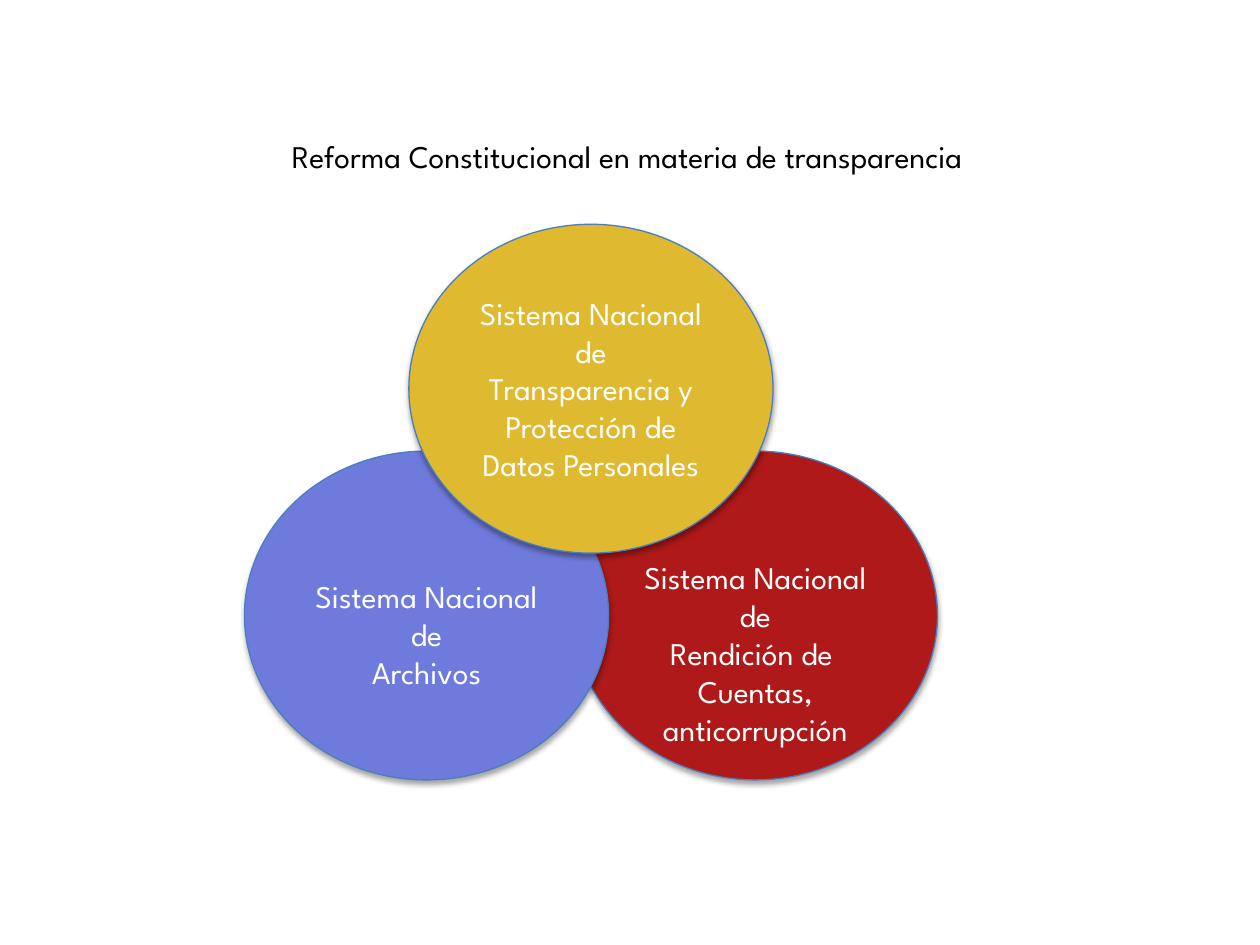
from lxml.etree import SubElement
from pptx import Presentation
from pptx.dml.color import RGBColor as Color
from pptx.enum.shapes import MSO_SHAPE as Shape
from pptx.enum.text import MSO_ANCHOR as Anchor, PP_ALIGN as Align
from pptx.oxml.ns import qn
from pptx.util import Inches, Pt

colors = {
    "title": "000000",
    "label": "FFFFFF",
    "outline": "4B7EBC",
    "shadow": "000000",
    "accountability": "AF1919",
    "archives": "6E7BDC",
    "transparency": "DFBA31",
}
text_format = {"name": "League Spartan", "size": Pt(18)}
origin_left, origin_top = 1.94, 1.78
column, row = 1.305, 1.8
circle_width, circle_height = 2.89, 2.61

circles = [
    ("accountability", 2, 1, 0.47,
     ["Sistema Nacional de", "Rendición de ", "Cuentas, anticorrupción"]),
    ("archives", 0, 1, 0.62, ["Sistema Nacional", "de", "Archivos"]),
    ("transparency", 1, 0, 0.17,
     ["Sistema Nacional", "de", "Transparencia y Protección de Datos Personales"]),
]


def write_lines(frame, lines, color):
    frame.word_wrap = True
    for index, line in enumerate(lines):
        para = frame.add_paragraph() if index else frame.paragraphs[0]
        para.alignment = Align.CENTER
        span = para.add_run()
        span.text = line
        for name, value in text_format.items():
            setattr(span.font, name, value)
        span.font.color.rgb = Color.from_string(color)


def add_shadow(shape):
    shape.shadow.inherit = False
    effects = shape.element.spPr.find(qn("a:effectLst"))
    shadow = SubElement(effects, qn("a:outerShdw"), blurRad=str(Pt(3.1)),
                        dist=str(Pt(1.8)), dir="5400000", rotWithShape="0")
    tint = SubElement(shadow, qn("a:srgbClr"), val=colors["shadow"])
    SubElement(tint, qn("a:alpha"), val="35000")


deck = Presentation()
deck.slide_width, deck.slide_height = Inches(10), Inches(7.5)
page = deck.slides.add_slide(deck.slide_layouts[6])

title = page.shapes.add_textbox(Inches(0.51), Inches(1.03), Inches(9), Inches(0.41))
title.text_frame.vertical_anchor = Anchor.MIDDLE
write_lines(title.text_frame, ["Reforma Constitucional en materia de transparencia "],
            colors["title"])

for part, column_index, row_index, top_inset, lines in circles:
    circle = page.shapes.add_shape(
        Shape.OVAL,
        Inches(origin_left + column_index * column),
        Inches(origin_top + row_index * row),
        Inches(circle_width), Inches(circle_height))
    circle.fill.solid()
    circle.fill.fore_color.rgb = Color.from_string(colors[part])
    circle.line.color.rgb = Color.from_string(colors["outline"])
    circle.line.width = Pt(0.75)
    add_shadow(circle)
    frame_format = {"vertical_anchor": Anchor.TOP, "margin_top": Inches(top_inset),
                    "margin_bottom": 0}
    for key, value in frame_format.items():
        setattr(circle.text_frame, key, value)
    write_lines(circle.text_frame, lines, colors["label"])

deck.save("out.pptx")
